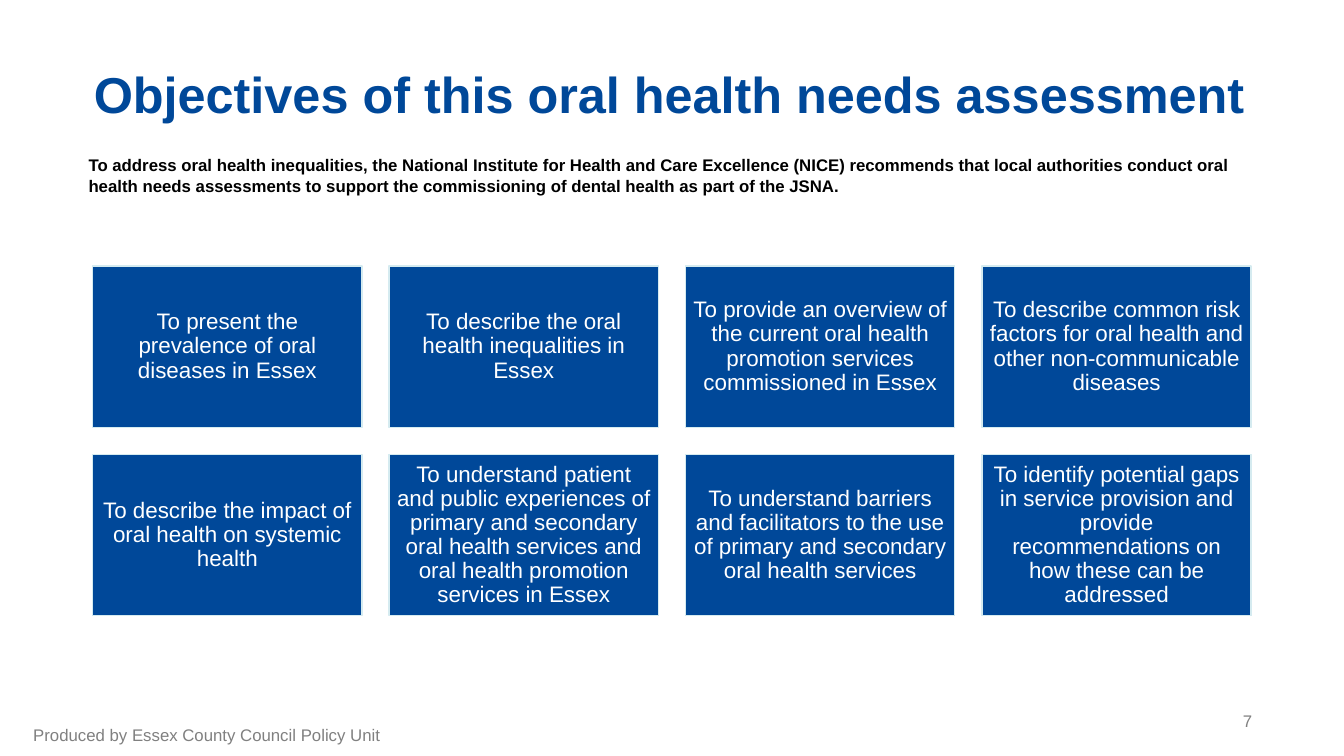
"""Build the slide listing the objectives of the oral health needs assessment."""
from dataclasses import dataclass

from pptx import Presentation
from pptx.dml.color import RGBColor
from pptx.enum.shapes import MSO_SHAPE
from pptx.enum.text import MSO_ANCHOR, MSO_AUTO_SIZE, PP_ALIGN
from pptx.shapes.autoshape import Shape
from pptx.slide import Slide
from pptx.util import Inches, Pt

RECTANGLE = MSO_SHAPE.RECTANGLE
TOP, MIDDLE, BOTTOM = MSO_ANCHOR.TOP, MSO_ANCHOR.MIDDLE, MSO_ANCHOR.BOTTOM
LEFT, CENTER, RIGHT = PP_ALIGN.LEFT, PP_ALIGN.CENTER, PP_ALIGN.RIGHT
NO_AUTOFIT = MSO_AUTO_SIZE.NONE

BLUE = RGBColor(0x00, 0x48, 0x99)
PALE_BLUE = RGBColor(0xD5, 0xEB, 0xF0)
GREY = RGBColor(0x80, 0x80, 0x80)
BLACK = RGBColor(0x00, 0x00, 0x00)
WHITE = RGBColor(0xFF, 0xFF, 0xFF)

FONT = "Arial"
TITLE_ONLY = 5
COLUMNS = 4
CARD_LEFT, CARD_TOP = 0.92, 2.64
CARD_WIDTH, CARD_HEIGHT = 2.67, 1.6
CARD_GAP = 0.27

OBJECTIVES = [
    "To present the prevalence of oral diseases in Essex",
    "To describe the oral health inequalities in Essex",
    "To provide an overview of the current oral health promotion services "
    "commissioned in Essex",
    "To describe common risk factors for oral health and other "
    "non-communicable diseases",
    "To describe the impact of oral health on systemic health",
    "To understand patient and public experiences of primary and secondary "
    "oral health services and oral health promotion services in Essex",
    "To understand barriers and facilitators to the use of primary and "
    "secondary oral health services",
    "To identify potential gaps in service provision and provide "
    "recommendations on how these can be addressed",
]


@dataclass(frozen=True)
class Box:
    """Position and size in inches."""

    left: float
    top: float
    width: float
    height: float

    def lengths(self) -> tuple[Inches, Inches, Inches, Inches]:
        """Return the four values as lengths."""
        return (Inches(self.left), Inches(self.top),
                Inches(self.width), Inches(self.height))


@dataclass(frozen=True)
class Style:
    """Look of a block of text, with insets in inches."""

    size: int
    color: RGBColor
    bold: bool = False
    align: PP_ALIGN = LEFT
    anchor: MSO_ANCHOR = MIDDLE
    spacing: float = 1.0
    insets: tuple[float, float, float, float] = (0.1, 0.05, 0.1, 0.05)


@dataclass(frozen=True)
class Note:
    """Free-standing text on the slide."""

    text: str
    box: Box
    style: Style


TITLE = Note(
    "Objectives of this oral health needs assessment",
    Box(0.83, 0.63, 11.91, 0.6),
    Style(36, BLUE, bold=True, anchor=BOTTOM, spacing=0.9,
          insets=(0.1, 0.05, 0.1, 0)),
)
NOTES = [
    Note(
        "To address oral health inequalities, the National Institute for "
        "Health and Care Excellence (NICE) recommends that local authorities "
        "conduct oral health needs assessments to support the commissioning "
        "of dental health as part of the JSNA.",
        Box(0.78, 1.49, 12, 0.5),
        Style(12, BLACK, bold=True, anchor=TOP),
    ),
    Note("7", Box(9.42, 6.95, 3, 0.4),
         Style(12, GREY, align=RIGHT, insets=(0.1, 0.05, 0, 0.05))),
    Note("Produced by Essex County Council Policy Unit",
         Box(0.33, 7.21, 6.3, 0.15),
         Style(12, GREY, insets=(0, 0.05, 0.1, 0.05))),
]
CARD_STYLE = Style(16, WHITE, align=CENTER, spacing=0.9, insets=(0.07,) * 4)


def write(sp: Shape, text: str, style: Style) -> None:
    """Fill a shape with one styled paragraph."""
    tf = sp.text_frame
    tf.word_wrap = True
    tf.auto_size = NO_AUTOFIT
    tf.vertical_anchor = style.anchor
    tf.margin_left, tf.margin_top, tf.margin_right, tf.margin_bottom = map(
        Inches, style.insets)
    p = tf.paragraphs[0]
    p.alignment = style.align
    p.line_spacing = style.spacing
    r = p.add_run()
    r.text = text
    r.font.name = FONT
    r.font.size = Pt(style.size)
    r.font.bold = style.bold
    r.font.color.rgb = style.color


def add_title(s: Slide, note: Note) -> None:
    """Place and fill the title placeholder."""
    sp = s.shapes.title
    sp.left, sp.top, sp.width, sp.height = note.box.lengths()
    write(sp, note.text, note.style)


def add_note(s: Slide, note: Note) -> None:
    """Add a text box."""
    write(s.shapes.add_textbox(*note.box.lengths()), note.text, note.style)


def add_card(s: Slide, index: int, text: str) -> None:
    """Add one objective at its place in the grid."""
    row, column = divmod(index, COLUMNS)
    box = Box(CARD_LEFT + column * (CARD_WIDTH + CARD_GAP),
              CARD_TOP + row * (CARD_HEIGHT + CARD_GAP),
              CARD_WIDTH, CARD_HEIGHT)
    sp = s.shapes.add_shape(RECTANGLE, *box.lengths())
    sp.shadow.inherit = False
    sp.fill.solid()
    sp.fill.fore_color.rgb = BLUE
    sp.line.color.rgb = PALE_BLUE
    sp.line.width = Pt(1)
    write(sp, text, CARD_STYLE)


def main() -> None:
    """Build and save the presentation."""
    prs = Presentation()
    prs.slide_width, prs.slide_height = Inches(13.33), Inches(7.5)
    s = prs.slides.add_slide(prs.slide_layouts[TITLE_ONLY])
    add_title(s, TITLE)
    for note in NOTES:
        add_note(s, note)
    for index, text in enumerate(OBJECTIVES):
        add_card(s, index, text)
    prs.save("out.pptx")


if __name__ == "__main__":
    main()
